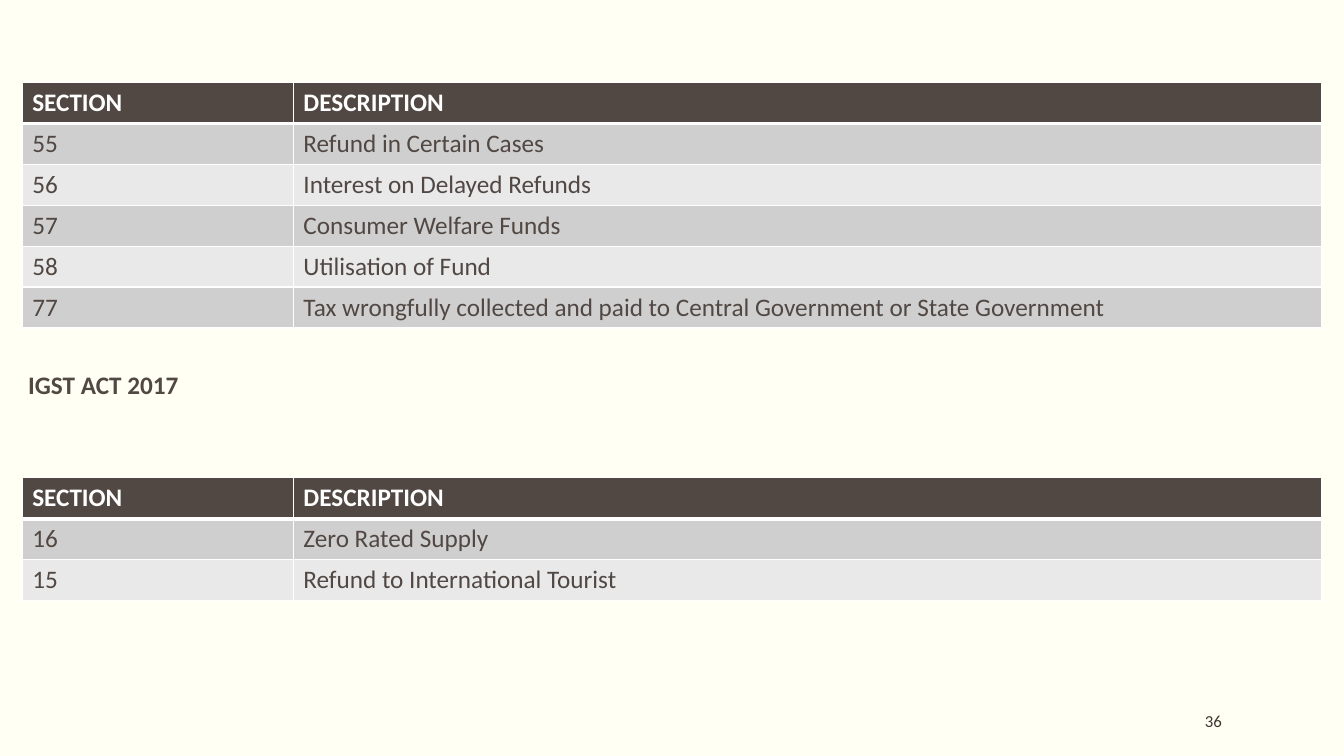
"""Build a slide listing the refund sections of two tax acts."""
from dataclasses import dataclass

from lxml.etree import SubElement
from pptx import Presentation
from pptx.dml.color import RGBColor
from pptx.enum.text import MSO_ANCHOR, MSO_AUTO_SIZE, PP_ALIGN
from pptx.oxml.ns import qn
from pptx.slide import Slide
from pptx.table import _Cell
from pptx.text.text import TextFrame
from pptx.util import Inches, Pt

COLORS = {
    "page": "FFFFF3",
    "dark": "514843",
    "odd": "D0CFCF",
    "even": "E9E9E9",
    "white": "FFFFFF",
    "number": "3D3632",
}
WIDTHS = (2.69, 10.2)
HEIGHT = 0.4
HEAD = ("SECTION", "DESCRIPTION")


@dataclass
class Act:
    """A table of sections and its top edge in inches."""
    top: float
    rows: list[tuple[str, str]]


ACTS = [
    Act(0.82, [
        ("55", "Refund in Certain Cases"),
        ("56", "Interest on Delayed Refunds"),
        ("57", "Consumer Welfare Funds"),
        ("58", "Utilisation of Fund"),
        ("77", "Tax wrongfully collected and paid to Central Government or State Government"),
    ]),
    Act(4.74, [
        ("16", "Zero Rated Supply"),
        ("15", "Refund to International Tourist"),
    ]),
]


def color(name: str) -> RGBColor:
    """Look up a named color."""
    return RGBColor.from_string(COLORS[name])


def write(frame: TextFrame, text: str, size: int, tint: str, bold: bool = False) -> None:
    """Set the text of a frame and its font."""
    frame.text = text
    font = frame.paragraphs[0].font
    font.name, font.size, font.bold = "Calibri", Pt(size), bold
    font.color.rgb = color(tint)


def edge(cell: _Cell, base: float) -> None:
    """Draw white borders with the given bottom width in points."""
    props = cell._tc.get_or_add_tcPr()
    for side, width in (("L", 1), ("R", 1), ("T", 1), ("B", base)):
        line = SubElement(props, qn(f"a:ln{side}"), w=str(Pt(width)))
        fill = SubElement(line, qn("a:solidFill"))
        SubElement(fill, qn("a:srgbClr"), val=COLORS["white"])


def draw(slide: Slide, act: Act) -> None:
    """Add the table of one act."""
    rows = [HEAD, *act.rows]
    table = slide.shapes.add_table(
        len(rows), len(WIDTHS), Inches(0.22), Inches(act.top),
        Inches(sum(WIDTHS)), Inches(HEIGHT * len(rows))).table
    for column, width in zip(table.columns, WIDTHS):
        column.width = Inches(width)
    for r, row in enumerate(rows):
        head = r == 0
        shade = "dark" if head else "odd" if r % 2 else "even"
        for c, text in enumerate(row):
            cell = table.cell(r, c)
            edge(cell, 3 if head else 1)
            cell.fill.solid()
            cell.fill.fore_color.rgb = color(shade)
            write(cell.text_frame, text, 18, "white" if head else "dark", head)


def main() -> None:
    """Build and save the slide."""
    deck = Presentation()
    deck.slide_width, deck.slide_height = Inches(13.33), Inches(7.5)
    slide = deck.slides.add_slide(deck.slide_layouts[5])
    slide.background.fill.solid()
    slide.background.fill.fore_color.rgb = color("page")

    title = slide.shapes.title
    title.left, title.top = Inches(0.18), Inches(3.61)
    title.width, title.height = Inches(5.62), Inches(0.4)
    frame = title.text_frame
    frame.auto_size = MSO_AUTO_SIZE.NONE
    frame.vertical_anchor = MSO_ANCHOR.TOP
    write(frame, "IGST ACT 2017", 18, "dark", True)
    frame.paragraphs[0].alignment = PP_ALIGN.LEFT

    for act in ACTS:
        draw(slide, act)

    frame = slide.shapes.add_textbox(
        Inches(10.12), Inches(6.95), Inches(2), Inches(0.4)).text_frame
    frame.word_wrap = True
    frame.margin_left = frame.margin_right = 0
    frame.vertical_anchor = MSO_ANCHOR.MIDDLE
    write(frame, "36", 12, "number")
    frame.paragraphs[0].alignment = PP_ALIGN.RIGHT

    deck.save("out.pptx")


if __name__ == "__main__":
    main()
